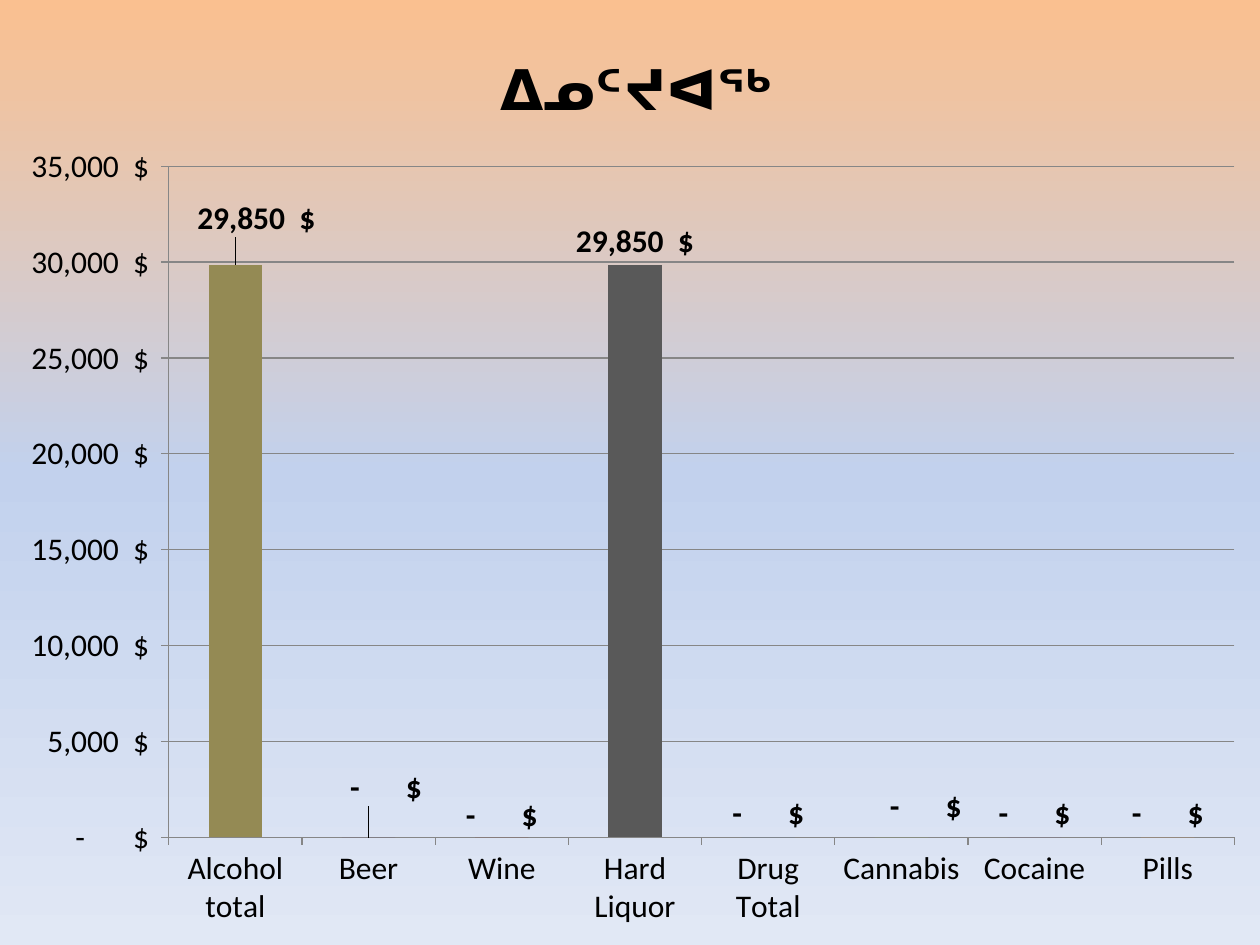
from dataclasses import dataclass

from lxml.etree import SubElement
from pptx import Presentation
from pptx.chart.data import CategoryChartData
from pptx.dml.color import RGBColor as RGB
from pptx.enum.chart import XL_CHART_TYPE as CT, XL_LABEL_POSITION as LP, XL_TICK_MARK as TM
from pptx.oxml import parse_xml
from pptx.oxml.ns import nsdecls, qn
from pptx.util import Pt

WIDTH, HEIGHT = 720, 540
MONEY = '_ * #,##0_)\\ "$"_ ;_ * \\(#,##0\\)\\ "$"_ ;_ * "-"??_)\\ "$"_ ;_ @_ '

# Chart content
TITLE = "ᐃᓄᑦᔪᐊᖅ"
COSTS = {"Alcohol total": 29850, "Beer": 0, "Wine": 0, "Hard Liquor": 29850,
         "Drug Total": 0, "Cannabis": 0, "Cocaine": 0, "Pills": 0}
BAR_COLORS = {"Alcohol total": "948A54", "Beer": "604A7B", "Wine": "953735",
              "Hard Liquor": "595959", "Cannabis": "9BBB59", "Cocaine": "8064A2",
              "Pills": "F79646"}
# Label shifts in points, right and down
LABEL_SHIFTS = {"Alcohol total": (12, -13), "Beer": (10, -15),
                "Wine": (0, 1), "Cannabis": (14, -4)}


@dataclass
class Theme:
    font: str = "Calibri"
    text: str = "000000"
    line: str = "868686"
    bar: str = "4F81BD"
    body: int = 18
    title: int = 32
    background: tuple = ((0, "FAC090"), (50, "C2D1ED"), (100, "E1E8F5"))


def assign(target, **values):
    for name, value in values.items():
        setattr(target, name, value)


def manual_layout(x, y, w=None, h=None, edge=False):
    """Layout element from lengths in points."""
    parts = ["<c:layoutTarget val='inner'/>"] if w else []
    if edge:
        parts += ["<c:xMode val='edge'/>", "<c:yMode val='edge'/>"]
    sizes = {"x": (x, WIDTH), "y": (y, HEIGHT), "w": (w, WIDTH), "h": (h, HEIGHT)}
    parts += [f"<c:{k} val='{v / full:.4f}'/>" for k, (v, full) in sizes.items()
              if v is not None]
    return parse_xml(f"<c:layout {nsdecls('c')}><c:manualLayout>{''.join(parts)}"
                     "</c:manualLayout></c:layout>")


def set_layout(parent, layout, after=None):
    for old in parent.findall(qn("c:layout")):
        parent.remove(old)
    if after is None:
        parent.insert(0, layout)
    else:
        parent.find(qn(after)).addnext(layout)


class Builder:
    def __init__(self, slide, theme):
        self.s, self.theme = slide, theme

    def style_font(self, font, size, bold=False):
        assign(font, name=self.theme.font, size=Pt(size), bold=bold)
        font.color.rgb = RGB.from_string(self.theme.text)

    def background(self):
        fill = self.s.background.fill
        fill.gradient()
        fill.gradient_angle = 270
        stops = self.s.element.xpath(".//p:bg//a:gsLst")[0]
        for old in list(stops):
            stops.remove(old)
        for pos, color in self.theme.background:
            gs = SubElement(stops, qn("a:gs"), pos=str(pos * 1000))
            SubElement(gs, qn("a:srgbClr"), val=color)

    def axis(self, axis, **values):
        assign(axis, major_tick_mark=TM.OUTSIDE, minor_tick_mark=TM.NONE, **values)
        self.style_font(axis.tick_labels.font, self.theme.body)
        self.line(axis.format.line)

    def line(self, line):
        line.color.rgb = RGB.from_string(self.theme.line)
        line.width = Pt(0.75)

    def title(self, chart, text):
        tf = chart.chart_title.text_frame
        tf.text = text
        self.style_font(tf.paragraphs[0].runs[0].font, self.theme.title, True)
        title = chart.element.xpath("c:chart/c:title")[0]
        set_layout(title, manual_layout(280, 23, edge=True), after="c:tx")

    def labels(self, series, names, shifts):
        labels = series.data_labels
        assign(labels, show_value=True, number_format=MONEY,
               number_format_is_linked=False, position=LP.OUTSIDE_END)
        self.style_font(labels.font, self.theme.body, True)
        for name, shift in shifts.items():
            idx = names.index(name)
            label = series.points[idx].data_label
            self.style_font(label.font, self.theme.body, True)
            label.position = LP.OUTSIDE_END
            el = series.data_labels._element.xpath(f"c:dLbl[c:idx/@val='{idx}']")[0]
            layout = manual_layout(*shift)
            set_layout(el, layout, after="c:idx")
            fmt = parse_xml(f"<c:numFmt {nsdecls('c')} formatCode='' sourceLinked='0'/>")
            fmt.set("formatCode", MONEY)
            layout.addnext(fmt)

    def column_chart(self, costs, colors):
        names = list(costs)
        data = CategoryChartData(number_format=MONEY)
        data.categories = names
        data.add_series("Series 1", list(costs.values()))
        chart = self.s.shapes.add_chart(CT.COLUMN_CLUSTERED, Pt(0), Pt(0),
                                        Pt(WIDTH), Pt(HEIGHT), data).chart
        chart.has_legend = False
        self.style_font(chart.font, self.theme.body)
        self.title(chart, TITLE)

        # Axes and plot area
        self.axis(chart.category_axis)
        value_axis = chart.value_axis
        self.axis(value_axis, minimum_scale=0, maximum_scale=35000, major_unit=5000,
                  has_major_gridlines=True)
        assign(value_axis.tick_labels, number_format=MONEY, number_format_is_linked=False)
        self.line(value_axis.major_gridlines.format.line)
        plot_area = chart.element.xpath("c:chart/c:plotArea")[0]
        set_layout(plot_area, manual_layout(96.5, 95, 609, 383.5, edge=True))

        # Bars and their labels
        plot = chart.plots[0]
        assign(plot, gap_width=150, vary_by_categories=False)
        series = plot.series[0]
        series.format.fill.solid()
        series.format.fill.fore_color.rgb = RGB.from_string(self.theme.bar)
        for name, color in colors.items():
            fill = series.points[names.index(name)].format.fill
            fill.solid()
            fill.fore_color.rgb = RGB.from_string(color)
        self.labels(series, names, LABEL_SHIFTS)


def main():
    prs = Presentation()
    assign(prs, slide_width=Pt(WIDTH), slide_height=Pt(HEIGHT))
    # Blank layout: the heading belongs to the chart
    b = Builder(prs.slides.add_slide(prs.slide_layouts[6]), Theme())
    b.background()
    b.column_chart(COSTS, BAR_COLORS)
    prs.save("out.pptx")


if __name__ == "__main__":
    main()
